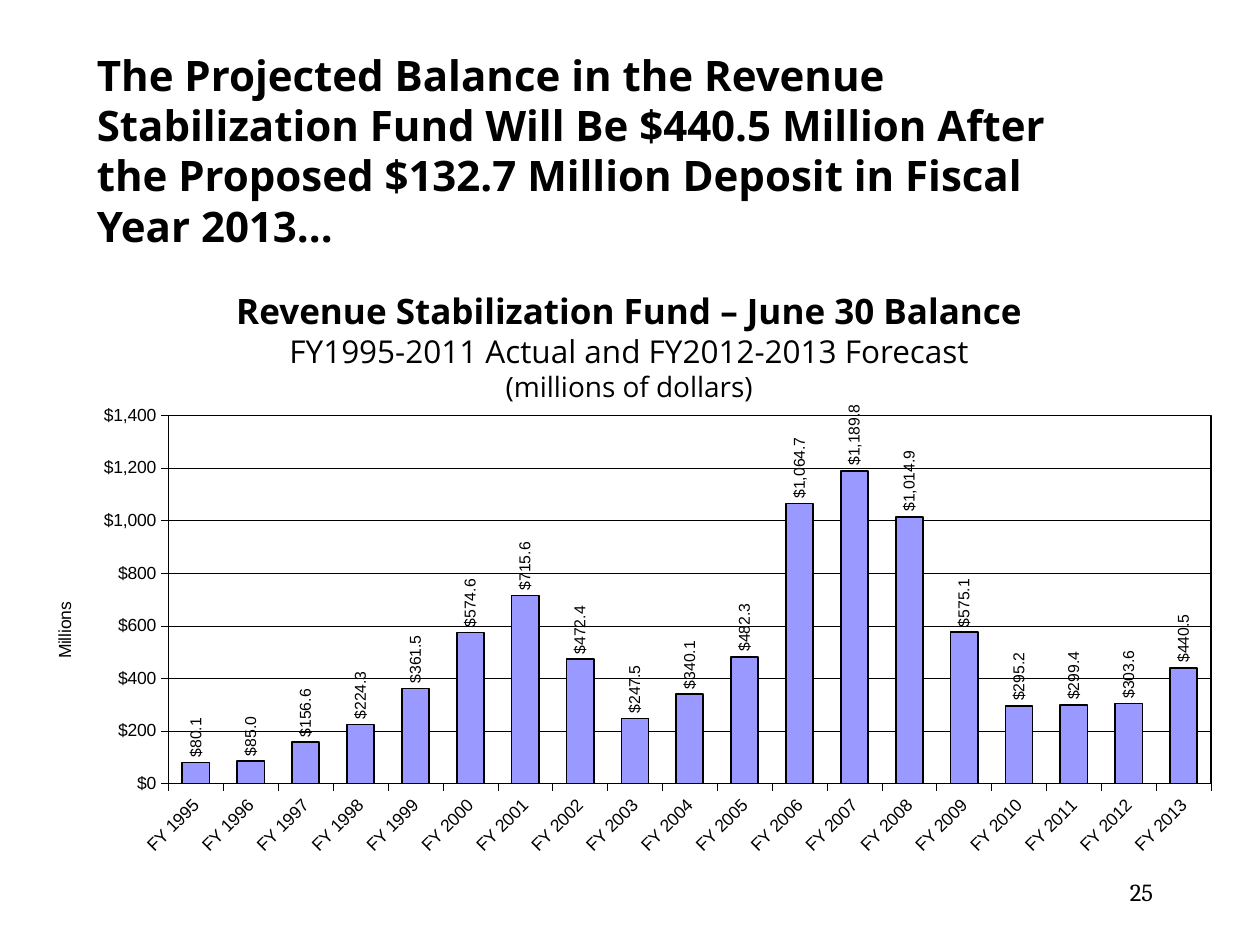
from lxml.etree import SubElement
from pptx import Presentation
from pptx.chart.data import CategoryChartData
from pptx.dml.color import RGBColor
from pptx.enum.chart import XL_CHART_TYPE, XL_LABEL_POSITION, XL_TICK_LABEL_POSITION, XL_TICK_MARK
from pptx.enum.text import MSO_ANCHOR, MSO_AUTO_SIZE, PP_ALIGN
from pptx.oxml import parse_xml
from pptx.oxml.ns import nsdecls, qn
from pptx.util import Inches, Pt

COLORS = {"text": "000000", "line": "000000", "bar": "9999FF", "paper": "FFFFFF"}
BALANCES = [80.1, 85.0, 156.6, 224.3, 361.5, 574.6, 715.6, 472.4, 247.5, 340.1,
            482.3, 1064.7, 1189.8, 1014.9, 575.1, 295.2, 299.4, 303.6, 440.5]
FIRST_YEAR = 1995
PLOT_LAYOUT = {"x": 0.108, "y": 0.125, "w": 0.887, "h": 0.667}


class SlideBuilder:
    """Holds the style and the current slide."""

    def __init__(self, slide):
        self.slide = slide

    def color(self, name):
        return RGBColor.from_string(COLORS[name])

    def style_font(self, font, name, size, bold=False):
        font.name, font.size, font.bold = name, Pt(size), bold
        font.color.rgb = self.color("text")

    def style_line(self, line, width):
        line.color.rgb = self.color("line")
        line.width = Pt(width)

    def text(self, box, lines, font="Open Sans", align=PP_ALIGN.LEFT,
             anchor=MSO_ANCHOR.TOP, wrap=True, grow=False):
        """Add a text box; each line is (text, size, bold)."""
        shape = self.slide.shapes.add_textbox(*map(Inches, box))
        frame = shape.text_frame
        frame.word_wrap = wrap
        frame.auto_size = MSO_AUTO_SIZE.SHAPE_TO_FIT_TEXT if grow else MSO_AUTO_SIZE.NONE
        frame.vertical_anchor = anchor
        frame.text = "\n".join(line[0] for line in lines)
        for paragraph, (_, size, bold) in zip(frame.paragraphs, lines):
            paragraph.alignment = align
            for run in paragraph.runs:
                self.style_font(run.font, font, size, bold)

    def rotate(self, element, degrees):
        body = element.find(qn("c:txPr")).find(qn("a:bodyPr"))
        body.set("rot", str(degrees * 60000))
        body.set("vert", "horz")

    def column_chart(self, box, categories, values):
        data = CategoryChartData()
        data.categories = categories
        data.add_series("Series 1", values)
        chart = self.slide.shapes.add_chart(
            XL_CHART_TYPE.COLUMN_CLUSTERED, *map(Inches, box), data).chart
        chart.has_legend = False
        chart.has_title = False
        self.style_font(chart.font, "Arial", 10)

        # Columns and their upright value labels
        plot = chart.plots[0]
        plot.gap_width = 102
        plot.vary_by_categories = False
        series = plot.series[0]
        series.format.fill.solid()
        series.format.fill.fore_color.rgb = self.color("bar")
        self.style_line(series.format.line, 1)
        labels = series.data_labels
        labels.show_value = True
        labels.position = XL_LABEL_POSITION.OUTSIDE_END
        labels.number_format = '"$"#,##0.0'
        labels.number_format_is_linked = False
        self.style_font(labels.font, "Arial", 9)
        self.rotate(labels._element, -90)

        # Axes
        for axis in (chart.category_axis, chart.value_axis):
            axis.major_tick_mark = XL_TICK_MARK.OUTSIDE
            axis.minor_tick_mark = XL_TICK_MARK.NONE
            self.style_font(axis.tick_labels.font, "Arial", 10)
            self.style_line(axis.format.line, 0.25)
        chart.category_axis.tick_label_position = XL_TICK_LABEL_POSITION.LOW
        self.rotate(chart.category_axis._element, -45)
        value_axis = chart.value_axis
        value_axis.minimum_scale, value_axis.maximum_scale = 0, 1400
        value_axis.major_unit = 200
        value_axis.tick_labels.number_format = r"\$#,##0"
        value_axis.tick_labels.number_format_is_linked = False
        self.style_line(value_axis.major_gridlines.format.line, 0.25)
        title = value_axis.axis_title.text_frame
        title.text = "Millions"
        self.style_font(title.paragraphs[0].runs[0].font, "Arial", 10)

        self.frame_plot(chart)

    def frame_plot(self, chart):
        """Place the inner plot area and give it a fill and border."""
        area = chart._chartSpace.chart.plotArea
        for old in area.findall(qn("c:layout")):
            area.remove(old)
        layout = parse_xml(f"<c:layout {nsdecls('c')}><c:manualLayout/></c:layout>")
        settings = {"layoutTarget": "inner", "xMode": "edge", "yMode": "edge", **PLOT_LAYOUT}
        for tag, value in settings.items():
            SubElement(layout[0], qn(f"c:{tag}")).set("val", str(value))
        area.insert(0, layout)
        area.append(parse_xml(
            f"<c:spPr {nsdecls('c', 'a')}>"
            f"<a:solidFill><a:srgbClr val='{COLORS['paper']}'/></a:solidFill>"
            f"<a:ln w='{Pt(1)}'><a:solidFill><a:srgbClr val='{COLORS['line']}'/>"
            "</a:solidFill></a:ln></c:spPr>"))


def main():
    presentation = Presentation()
    presentation.slide_width, presentation.slide_height = Inches(10), Inches(7.5)
    builder = SlideBuilder(presentation.slides.add_slide(presentation.slide_layouts[6]))

    # Headline
    builder.text((0.67, 0.38, 7.75, 1.62), [
        ("The Projected Balance in the Revenue Stabilization Fund Will Be $440.5 Million "
         "After the Proposed $132.7 Million Deposit in Fiscal Year 2013…", 24, True),
    ], anchor=MSO_ANCHOR.MIDDLE)

    # Fund balance chart
    years = [f"FY {FIRST_YEAR + index}" for index in range(len(BALANCES))]
    builder.column_chart((0.33, 2.75, 9.33, 4.38), years, BALANCES)

    # Chart heading
    builder.text((0.33, 2.25, 9.33, 1.01), [
        ("Revenue Stabilization Fund – June 30 Balance", 20, True),
        ("FY1995-2011 Actual and FY2012-2013 Forecast", 18, False),
        ("(millions of dollars)", 16, False),
    ], align=PP_ALIGN.CENTER, grow=True)

    # Page number
    builder.text((7.17, 6.83, 2.08, 0.5), [("25", 14, False)], font="Cambria",
                 align=PP_ALIGN.RIGHT, anchor=MSO_ANCHOR.MIDDLE, wrap=False)

    presentation.save("out.pptx")


if __name__ == "__main__":
    main()
